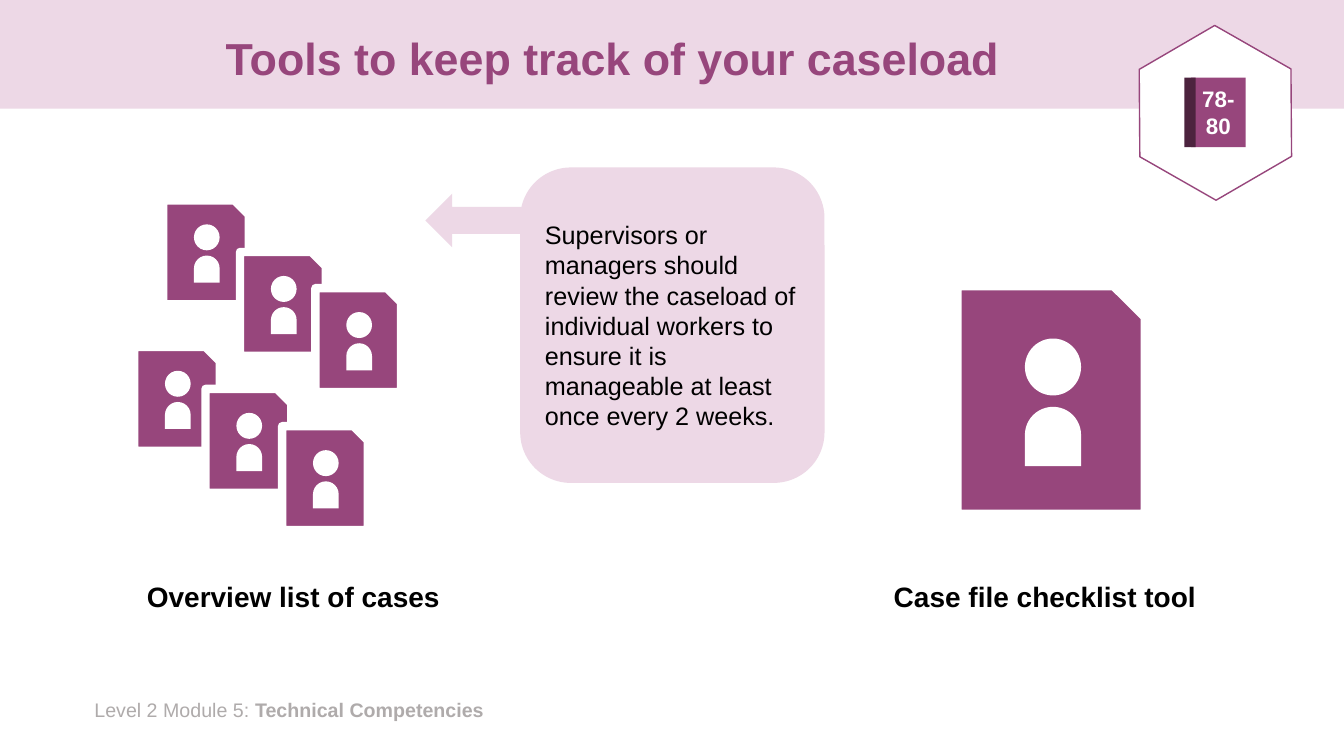
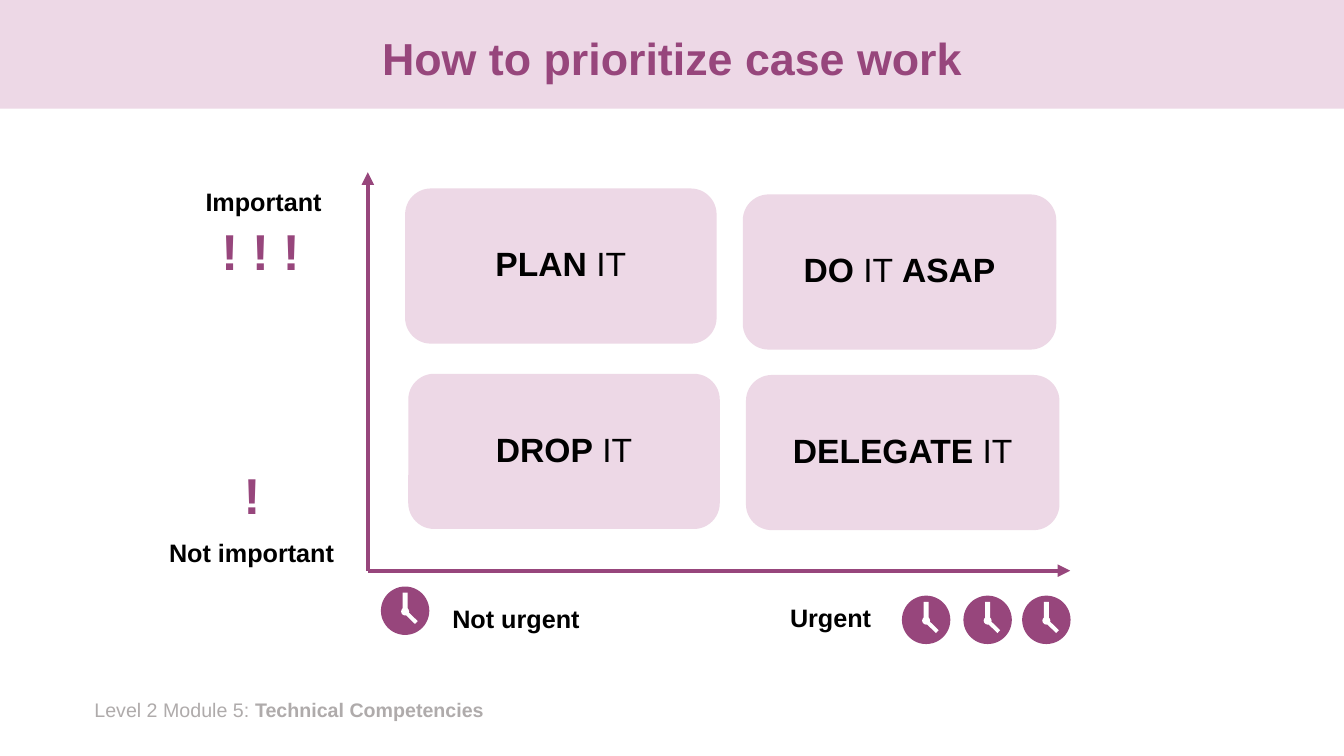
from typing import NamedTuple

from lxml import etree
from pptx import Presentation
from pptx import util as u
from pptx.dml import color
from pptx.enum import shapes, text
from pptx.oxml import ns

PLUM = "97467C"
DARK_PLUM = "4C233E"
BLUSH = "EDD8E6"
GREY = "AFABAB"
WHITE = "FFFFFF"
BLACK = "000000"
FONT = "Arial"
SHAPE = shapes.MSO_SHAPE
CENTER = text.PP_ALIGN.CENTER
LEFT = text.PP_ALIGN.LEFT


class Box(NamedTuple):
    left: float
    top: float
    width: float
    height: float


class Run(NamedTuple):
    words: str
    bold: bool = True


class Style(NamedTuple):
    size: float
    color: str = BLACK
    align: text.PP_ALIGN = LEFT
    spacing: float = 1.0
    wrap: bool = True
    anchor: text.MSO_ANCHOR = text.MSO_ANCHOR.TOP


class Label(NamedTuple):
    words: str
    box: Box
    style: Style


class Quadrant(NamedTuple):
    box: Box
    runs: list[Run]


MIDDLE = text.MSO_ANCHOR.MIDDLE
TITLE = Style(32, PLUM, CENTER, 0.9, anchor=MIDDLE)
FOOTER = Style(14, GREY)
CAPTION = Style(20, align=CENTER)
PAGES = Style(16, WHITE, CENTER, wrap=False, anchor=MIDDLE)
ADVICE = Style(18, anchor=MIDDLE)
AXIS_LABEL = Style(18, wrap=False)
MARKS = Style(36, PLUM, wrap=False)
ACTION = Style(24, align=CENTER, spacing=0.9, anchor=MIDDLE)

CASE_FILES = [
    Box(left, top, 2.16, 2.62)
    for left, top in [(4.11, 5.05), (6.05, 6.35), (7.95, 7.26),
                      (3.38, 8.74), (5.18, 9.8), (7.11, 10.74)]
] + [Box(24.13, 7.21, 4.72, 5.74)]

CAPTIONS = [
    Label("Overview list of cases", Box(2.29, 14.48, 10.21, 1.12), CAPTION),
    Label("Case file checklist tool", Box(21.23, 14.48, 10.21, 1.12), CAPTION),
]

AXIS_LABELS = [
    Label("Urgent", Box(19.66, 15.06, 2.59, 1.02), AXIS_LABEL),
    Label("Not urgent", Box(11.15, 15.09, 3.76, 1.02), AXIS_LABEL),
    Label("Not important", Box(4.01, 13.41, 4.72, 1.02), AXIS_LABEL),
    Label("Important", Box(4.93, 4.57, 3.48, 1.02), AXIS_LABEL),
    Label("! ! !", Box(5.33, 5.41, 2.67, 1.8), MARKS),
    Label("!", Box(5.89, 11.56, 0.97, 1.8), MARKS),
]

QUADRANTS = [
    Quadrant(Box(10.21, 4.75, 7.85, 3.91), [Run("PLAN"), Run(" IT", False)]),
    Quadrant(Box(18.72, 4.9, 7.9, 3.91),
             [Run("DO"), Run(" IT ", False), Run("ASAP")]),
    Quadrant(Box(10.29, 9.42, 7.85, 3.91), [Run("DROP"), Run(" IT", False)]),
    Quadrant(Box(18.8, 9.45, 7.9, 3.91),
             [Run("DELEGATE "), Run("IT", False)]),
]

CLOCKS = [(9.6, 14.78), (22.73, 15.01), (24.28, 15.01), (25.76, 15.01)]
AXIS_ORIGIN = (9.27, 14.38)
AXIS_ENDS = [(9.27, 4.34), (26.97, 14.38)]


def rgb(value: str) -> color.RGBColor:
    return color.RGBColor.from_string(value)


def lengths(box: Box) -> list[u.Cm]:
    return [u.Cm(value) for value in box]


def draw(parent, kind: SHAPE, box: Box, fill: str, outline: str | None = None,
         weight: float = 1, rotation: float = 0):
    figure = parent.add_shape(kind, *lengths(box))
    figure.shadow.inherit = False
    figure.rotation = rotation
    figure.fill.solid()
    figure.fill.fore_color.rgb = rgb(fill)
    if outline:
        figure.line.color.rgb = rgb(outline)
        figure.line.width = u.Pt(weight)
    else:
        figure.line.fill.background()
    return figure


def write(holder, paragraphs: list[list[Run]], style: Style) -> None:
    frame = holder.text_frame
    frame.word_wrap = style.wrap
    frame.vertical_anchor = style.anchor
    for index, runs in enumerate(paragraphs):
        paragraph = frame.add_paragraph() if index else frame.paragraphs[0]
        paragraph.alignment = style.align
        paragraph.line_spacing = style.spacing
        paragraph.font.name = FONT
        paragraph.font.size = u.Pt(style.size)
        paragraph.font.color.rgb = rgb(style.color)
        paragraph.font.bold = runs[0].bold
        for part in runs:
            run = paragraph.add_run()
            run.text = part.words
            if part.bold != runs[0].bold:
                run.font.bold = part.bold


def add_text(slide, box: Box, runs: list[Run], style: Style) -> None:
    write(slide.shapes.add_textbox(*lengths(box)), [runs], style)


def add_labels(slide, labels: list[Label]) -> None:
    for label in labels:
        add_text(slide, label.box, [Run(label.words)], label.style)


def add_base(deck, title: str, title_width: float):
    slide = deck.slides.add_slide(deck.slide_layouts[6])
    draw(slide.shapes, SHAPE.RECTANGLE, Box(0, 0, 33.87, 2.74), BLUSH)
    add_text(slide, Box(2.13, 17.45, 11.56, 0.86),
             [Run("Level 2 Module 5: ", False), Run("Technical Competencies")],
             FOOTER)
    add_text(slide, Box(2.34, 0.33, title_width, 2.41), [Run(title)], TITLE)
    return slide


def add_page_badge(slide) -> None:
    badge = slide.shapes.add_group_shape().shapes
    hexagon = draw(badge, SHAPE.HEXAGON, Box(28.42, 0.94, 4.42, 3.81),
                   WHITE, PLUM, rotation=29.7)
    hexagon.adjustments[0] = 0.29
    cover = draw(badge, SHAPE.RECTANGLE, Box(30.02, 1.96, 1.37, 1.75), PLUM)
    write(cover, [[Run("78-")], [Run("80")]], PAGES)
    draw(badge, SHAPE.RECTANGLE, Box(29.85, 1.96, 0.28, 1.75), DARK_PLUM)


def add_case_file(slide, sheet: Box) -> None:
    def within(x: float, y: float, width: float, height: float) -> Box:
        return Box(sheet.left + x * sheet.width, sheet.top + y * sheet.height,
                   width * sheet.width, height * sheet.height)

    icon = slide.shapes.add_group_shape().shapes
    draw(icon, SHAPE.SNIP_1_RECTANGLE, sheet, PLUM, WHITE, 6)
    torso = draw(icon, SHAPE.ROUND_2_SAME_RECTANGLE,
                 within(0.36, 0.53, 0.3, 0.26), WHITE)
    torso.adjustments[0] = 0.5
    draw(icon, SHAPE.OVAL, within(0.36, 0.23, 0.3, 0.25), WHITE)


def add_clock(slide, left: float, top: float) -> None:
    icon = slide.shapes.add_group_shape().shapes
    draw(icon, SHAPE.OVAL, Box(left, top, 1.22, 1.22), PLUM)
    draw(icon, SHAPE.OVAL, Box(left + 0.51, top + 0.53, 0.2, 0.2), WHITE)
    draw(icon, SHAPE.RECTANGLE, Box(left + 0.37, top + 0.33, 0.48, 0.13),
         WHITE, rotation=270)
    draw(icon, SHAPE.RECTANGLE, Box(left + 0.61, top + 0.74, 0.33, 0.1),
         WHITE, rotation=224.2)


def add_axis(slide, end: tuple[float, float]) -> None:
    axis = slide.shapes.add_connector(
        shapes.MSO_CONNECTOR.STRAIGHT,
        *[u.Cm(value) for value in AXIS_ORIGIN + end])
    axis.line.color.rgb = rgb(PLUM)
    axis.line.width = u.Pt(3)
    etree.SubElement(axis.line._get_or_add_ln(), ns.qn("a:tailEnd"),
                     type="triangle")
    etree.SubElement(axis._element.spPr, ns.qn("a:effectLst"))


def build_tools(deck) -> None:
    slide = add_base(deck, "Tools to keep track of your caseload", 26.21)
    add_labels(slide, CAPTIONS)
    add_page_badge(slide)
    for sheet in CASE_FILES:
        add_case_file(slide, sheet)
    advice = draw(slide.shapes, SHAPE.ROUNDED_RECTANGLE,
                  Box(13.11, 4.22, 7.67, 7.95), BLUSH)
    write(advice, [[Run("Supervisors or managers should review the caseload of "
                        "individual workers to ensure it is manageable at "
                        "least once every 2 weeks.", False)]], ADVICE)
    draw(slide.shapes, SHAPE.LEFT_ARROW, Box(10.72, 4.88, 2.67, 1.35), BLUSH)


def build_priorities(deck) -> None:
    slide = add_base(deck, "How to prioritize case work", 29.21)
    add_labels(slide, AXIS_LABELS)
    for quadrant in QUADRANTS:
        card = draw(slide.shapes, SHAPE.ROUNDED_RECTANGLE, quadrant.box, BLUSH)
        write(card, [quadrant.runs], ACTION)
    for left, top in CLOCKS:
        add_clock(slide, left, top)
    for end in AXIS_ENDS:
        add_axis(slide, end)


def main() -> None:
    deck = Presentation()
    deck.slide_width = u.Cm(33.87)
    deck.slide_height = u.Cm(19.05)
    build_tools(deck)
    build_priorities(deck)
    deck.save("out.pptx")


if __name__ == "__main__":
    main()
